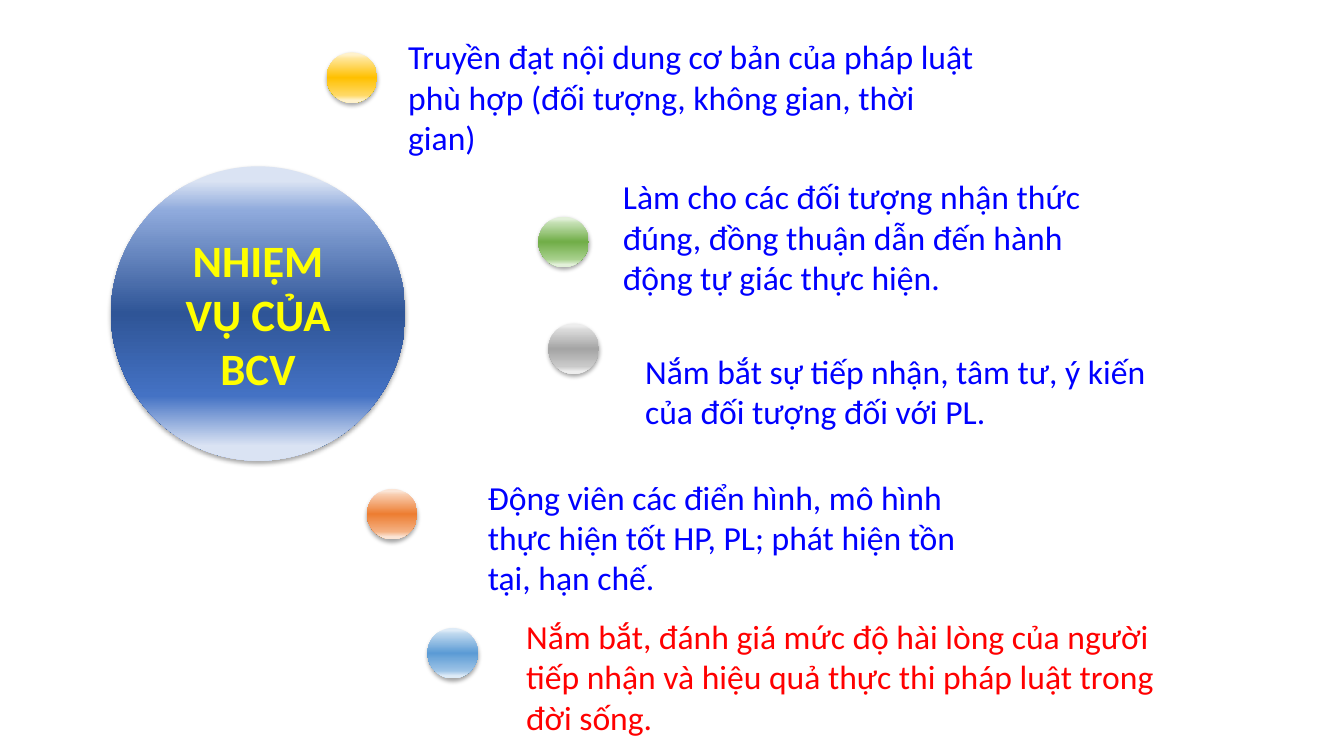
from pptx import Presentation
from pptx.dml.color import RGBColor
from pptx.enum.shapes import MSO_SHAPE
from pptx.enum.text import MSO_ANCHOR, MSO_AUTO_SIZE, PP_ALIGN
from pptx.oxml.ns import qn
from pptx.util import Inches, Pt
from lxml.etree import SubElement

FONT = "Calibri"
BALL_SIZE = 0.5
BALL_STOPS = (5, 12, 50, 85, 95)
HUB_STOPS = (5, 15, 50, 78, 95)
COLORS = {"blue": "0000FF", "red": "FF0000", "yellow": "FFFF00", "shadow": "000000"}
# Gradient colours from top to bottom
GRADIENTS = {
    "hub": ("DAE3F3", "8FAADC", "2F5597", "4472C4", "DAE3F3"),
    "gold": ("FFF2CC", "FFE699", "FFC000", "FFD966", "FFF2CC"),
    "green": ("E2F0D9", "C5E0B4", "70AD47", "A9D18E", "E2F0D9"),
    "gray": ("EDEDED", "DBDBDB", "A5A5A5", "C9C9C9", "EDEDED"),
    "orange": ("FBE5D6", "F8CBAD", "ED7D31", "F4B183", "FBE5D6"),
    "sky": ("DEEBF7", "BDD7EE", "5B9BD5", "9DC3E6", "DEEBF7"),
}
# Ball gradient, ball left and top, text box (left, top, width, height), text colour, text
TASKS = [
    ("gold", (3.24, 0.52), (3.95, 0.31, 5.82, 1.31), "blue",
     "Truyền đạt nội dung cơ bản của pháp luật phù hợp (đối tượng, không gian, thời gian)"),
    ("green", (5.34, 2.15), (6.08, 1.7, 5.28, 1.31), "blue",
     "Làm cho các đối tượng nhận thức đúng, đồng thuận dẫn đến hành động tự giác thực hiện."),
    ("gray", (5.44, 3.21), (6.3, 3.43, 5.49, 0.91), "blue",
     "Nắm bắt sự tiếp nhận, tâm tư, ý kiến của đối tượng đối với PL."),
    ("orange", (3.64, 4.85), (4.74, 4.68, 5.03, 1.31), "blue",
     "Động viên các điển hình, mô hình thực hiện tốt HP, PL; phát hiện tồn tại, hạn chế."),
    ("sky", (4.24, 6.23), (5.12, 6.06, 6.46, 1.31), "red",
     "Nắm bắt, đánh giá mức độ hài lòng của người tiếp nhận và hiệu quả thực thi "
     "pháp luật trong đời sống."),
]


def add_color(parent, color):
    return SubElement(parent, qn("a:srgbClr"), val=color)


def fill_gradient(sp, stops, colors):
    sp.fill.gradient()
    sp.fill.gradient_angle = 270
    stop_list = sp._element.spPr.find(".//" + qn("a:gsLst"))
    for old_stop in list(stop_list):
        stop_list.remove(old_stop)
    for stop, color in zip(stops, colors):
        add_color(SubElement(stop_list, qn("a:gs"), pos=str(stop * 1000)), color)


def add_soft_shadow(sp):
    sp.shadow.inherit = False
    effects = sp._element.spPr.find(qn("a:effectLst"))
    shadow = SubElement(effects, qn("a:outerShdw"), blurRad=str(Pt(3.1)),
                        dist=str(Pt(1.8)), dir="5400000", rotWithShape="0")
    SubElement(add_color(shadow, COLORS["shadow"]), qn("a:alpha"), val="35000")


def add_ball(s, left, top, size, stops, colors):
    sp = s.shapes.add_shape(MSO_SHAPE.OVAL, Inches(left), Inches(top),
                            Inches(size), Inches(size))
    fill_gradient(sp, stops, colors)
    sp.line.fill.background()
    add_soft_shadow(sp)
    return sp


def add_text(tf, text, size, color, bold=False, align=PP_ALIGN.LEFT):
    tf.word_wrap = True
    p = tf.paragraphs[0]
    p.alignment = align
    r = p.add_run()
    r.text = text
    r.font.name = FONT
    r.font.size = Pt(size)
    r.font.bold = bold
    r.font.color.rgb = RGBColor.from_string(COLORS[color])


def add_task(s, gradient, ball_at, box, color, text):
    add_ball(s, *ball_at, BALL_SIZE, BALL_STOPS, GRADIENTS[gradient])
    tf = s.shapes.add_textbox(*map(Inches, box)).text_frame
    tf.auto_size = MSO_AUTO_SIZE.SHAPE_TO_FIT_TEXT
    add_text(tf, text, 24, color)


def main():
    prs = Presentation()
    prs.slide_width, prs.slide_height = Inches(13.33), Inches(7.5)
    s = prs.slides.add_slide(prs.slide_layouts[6])
    hub = add_ball(s, 1.1, 1.65, 2.92, HUB_STOPS, GRADIENTS["hub"])
    hub.text_frame.vertical_anchor = MSO_ANCHOR.MIDDLE
    add_text(hub.text_frame, "NHIỆM VỤ CỦA BCV", 32, "yellow", True, PP_ALIGN.CENTER)
    for task in TASKS:
        add_task(s, *task)
    prs.save("out.pptx")


if __name__ == "__main__":
    main()
